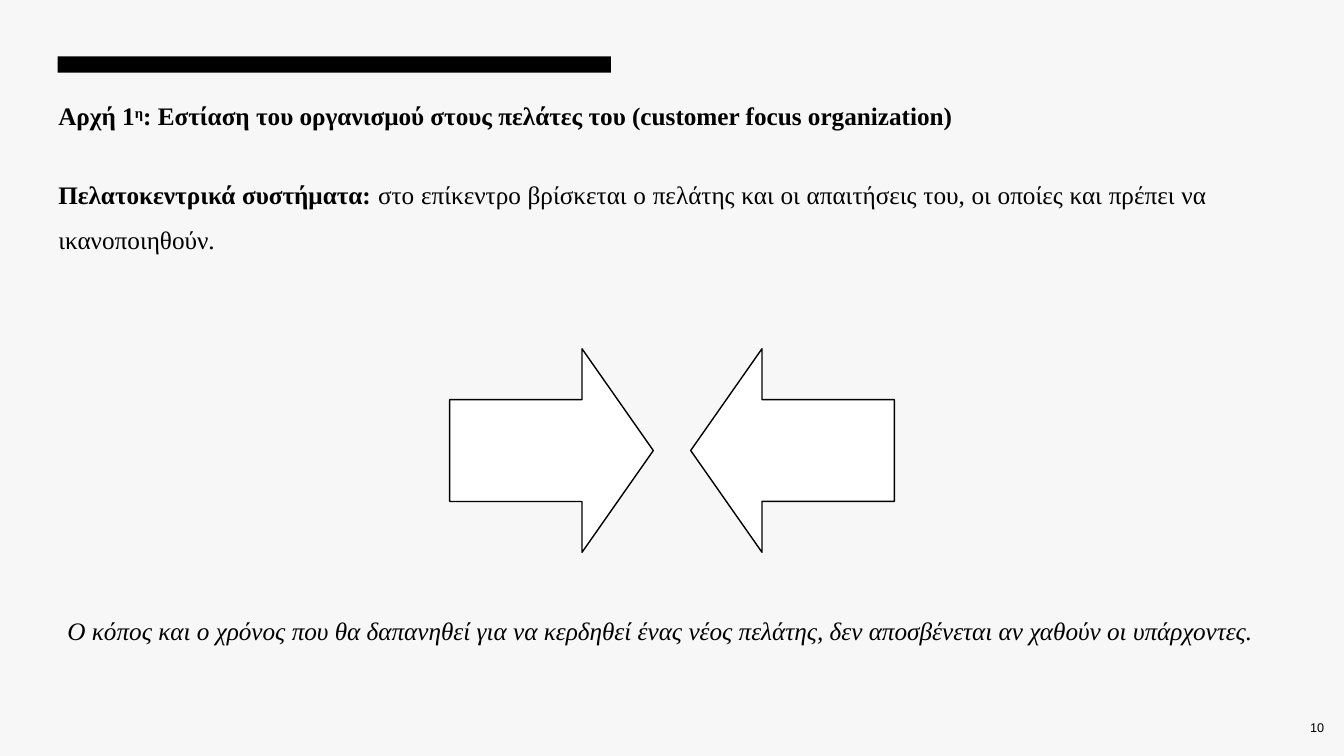
from dataclasses import dataclass

from pptx import Presentation
from pptx import util as u
from pptx.dml.color import RGBColor
from pptx.enum import shapes, text


@dataclass(frozen=True)
class Theme:
    paper: RGBColor = RGBColor.from_string("F7F7F7")
    ink: RGBColor = RGBColor.from_string("000000")
    arrow: RGBColor = RGBColor.from_string("FFFFFF")
    serif: str = "Times New Roman"
    sans: str = "Arial"
    body_size: int = 18
    number_size: int = 9


class SlideBuilder:
    """Draws on one slide; every length is a percentage of the slide's size."""

    def __init__(self, deck, theme):
        self.deck, self.theme = deck, theme
        self.page = deck.slides.add_slide(deck.slide_layouts[6])
        background = self.page.background.fill
        background.solid()
        background.fore_color.rgb = theme.paper

    def place(self, left, top, width, height):
        across, down = self.deck.slide_width / 100, self.deck.slide_height / 100
        return [round(length) for length in
                (left * across, top * down, width * across, height * down)]

    def shape(self, kind, area, fill, line=None):
        shape = self.page.shapes.add_shape(kind, *self.place(*area))
        shape.shadow.inherit = False
        shape.fill.solid()
        shape.fill.fore_color.rgb = fill
        if line is None:
            shape.line.fill.background()
        else:
            shape.line.color.rgb = line
            shape.line.width = u.Pt(1)
        return shape

    def arrow(self, left, rotation):
        arrow = self.shape(shapes.MSO_SHAPE.DOWN_ARROW, (left, ARROW_TOP, ARROW_WIDTH, ARROW_HEIGHT),
                           self.theme.arrow, self.theme.ink)
        arrow.adjustments[0] = 0.5
        arrow.adjustments[1] = 0.35
        arrow.rotation = rotation

    def text_box(self, area):
        """Adds an empty wrapping box and returns its frame and first paragraph."""
        frame = self.page.shapes.add_textbox(*self.place(*area)).text_frame
        frame.word_wrap = True
        return frame, frame.paragraphs[0]

    def style(self, para, name, size, **emphasis):
        para.font.name, para.font.size = name, u.Pt(size)
        para.font.color.rgb = self.theme.ink
        for key, value in emphasis.items():
            setattr(para.font, key, value)

    def statement(self, area, spans, spacing=None, **emphasis):
        """Adds a justified paragraph from (text, bold, raised) spans."""
        frame, para = self.text_box(area)
        frame.auto_size = text.MSO_AUTO_SIZE.SHAPE_TO_FIT_TEXT
        para.alignment = text.PP_ALIGN.JUSTIFY
        para.line_spacing = spacing
        self.style(para, self.theme.serif, self.theme.body_size, **emphasis)
        for words, bold, raised in spans:
            span = para.add_run()
            span.text = words
            if bold:
                span.font.bold = True
            if raised:
                span._r.get_or_add_rPr().set("baseline", "30000")

    def page_number(self, area, number):
        frame, para = self.text_box(area)
        frame.vertical_anchor = text.MSO_ANCHOR.MIDDLE
        para.text = str(number)
        para.alignment = text.PP_ALIGN.RIGHT
        self.style(para, self.theme.sans, self.theme.number_size)


MARGIN, TEXT_LEFT = 4.28, 3.6
LINE_HEIGHT = 5.33
ARROW_TOP, ARROW_WIDTH, ARROW_HEIGHT = 46.13, 15.15, 26.93
ARROW_GAP = 2.78


def main():
    deck = Presentation()
    deck.slide_width, deck.slide_height = u.Inches(13.33), u.Inches(7.5)
    theme = Theme()
    slide = SlideBuilder(deck, theme)

    slide.shape(shapes.MSO_SHAPE.RECTANGLE, (MARGIN, 7.47, 41.18, 2.13), theme.ink)
    slide.page_number((94, 93.6, 5.25, LINE_HEIGHT), 10)
    slide.statement((TEXT_LEFT, 12.67, 77.27, LINE_HEIGHT), [
        ("Αρχή 1", True, False),
        ("η", True, True),
        (": Εστίαση του οργανισμού στους πελάτες του (customer focus organization)", True, False),
    ])
    slide.statement((TEXT_LEFT, 21.07, 86.95, 12.8), [
        ("Πελατοκεντρικά συστήματα: ", True, False),
        ("στο επίκεντρο βρίσκεται ο πελάτης και οι απαιτήσεις του, "
         "οι οποίες και πρέπει να ικανοποιηθούν.", False, False),
    ], spacing=1.5)
    slide.arrow(50 - ARROW_GAP / 2 - ARROW_WIDTH, 270)
    slide.arrow(50 + ARROW_GAP / 2, 90)
    slide.statement((MARGIN, 80.67, 91.45, LINE_HEIGHT), [
        ("Ο κόπος και ο χρόνος που θα δαπανηθεί για να κερδηθεί ένας νέος πελάτης, "
         "δεν αποσβένεται αν χαθούν οι υπάρχοντες.", False, False),
    ], italic=True)

    deck.save("out.pptx")


if __name__ == "__main__":
    main()
